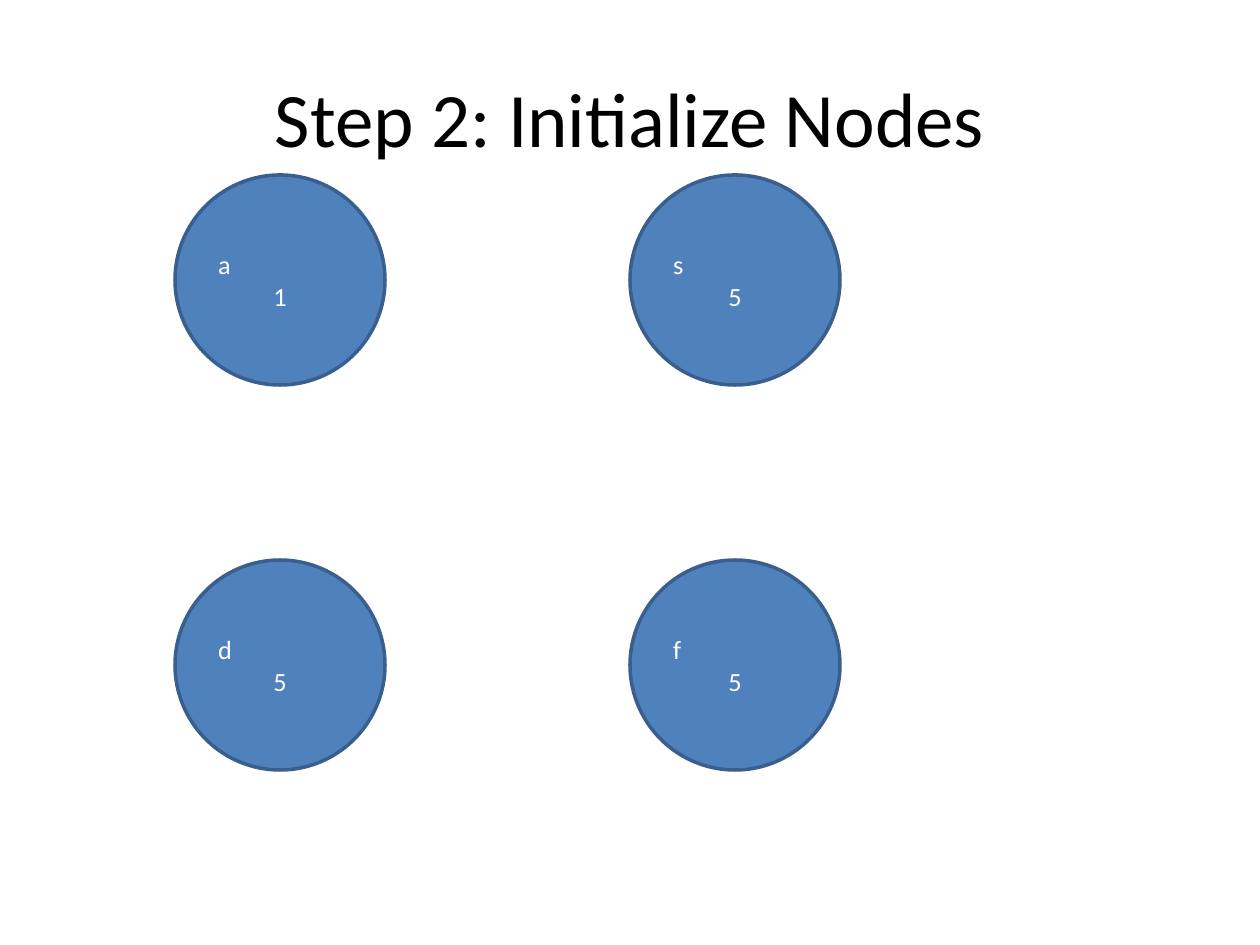
from pptx import Presentation
from pptx import util as u
from pptx.dml.color import RGBColor
from pptx.enum import shapes, text

BLACK = RGBColor(0x00, 0x00, 0x00)
WHITE = RGBColor(0xFF, 0xFF, 0xFF)
BLUE = RGBColor(0x4F, 0x81, 0xBD)
NAVY = RGBColor(0x3A, 0x5F, 0x8C)
SCALE = u.Inches(1) / 126


def px(*nums):
    return [u.Emu(round(n * SCALE)) for n in nums]


def style(para, size, color, align):
    para.alignment = align
    para.font.name = "Calibri"
    para.font.size = u.Pt(size)
    para.font.color.rgb = color


deck = Presentation()
deck.slide_width, deck.slide_height = px(1260, 945)
slide = deck.slides.add_slide(deck.slide_layouts[5])

title = slide.shapes.title
title.left, title.top, title.width, title.height = px(63, 38, 1134, 158)
title.text_frame.text = "Step 2: Initialize Nodes"
title.text_frame.vertical_anchor = text.MSO_ANCHOR.MIDDLE
style(title.text_frame.paragraphs[0], 44, BLACK, text.PP_ALIGN.CENTER)

nodes = [("a", "1"), ("s", "5"), ("d", "5"), ("f", "5")]
for i, (name, value) in enumerate(nodes):
    row, col = divmod(i, 2)
    node = slide.shapes.add_shape(
        shapes.MSO_SHAPE.OVAL, *px(175 + 455 * col, 175 + 385 * row, 210, 210))
    node.shadow.inherit = False
    node.fill.solid()
    node.fill.fore_color.rgb = BLUE
    node.line.color.rgb = NAVY
    node.line.width = u.Pt(2)
    frame = node.text_frame
    frame.vertical_anchor = text.MSO_ANCHOR.MIDDLE
    frame.text = f"{name}\n{value}"
    style(frame.paragraphs[0], 15, WHITE, text.PP_ALIGN.LEFT)
    style(frame.paragraphs[1], 15, WHITE, text.PP_ALIGN.CENTER)

deck.save("out.pptx")
